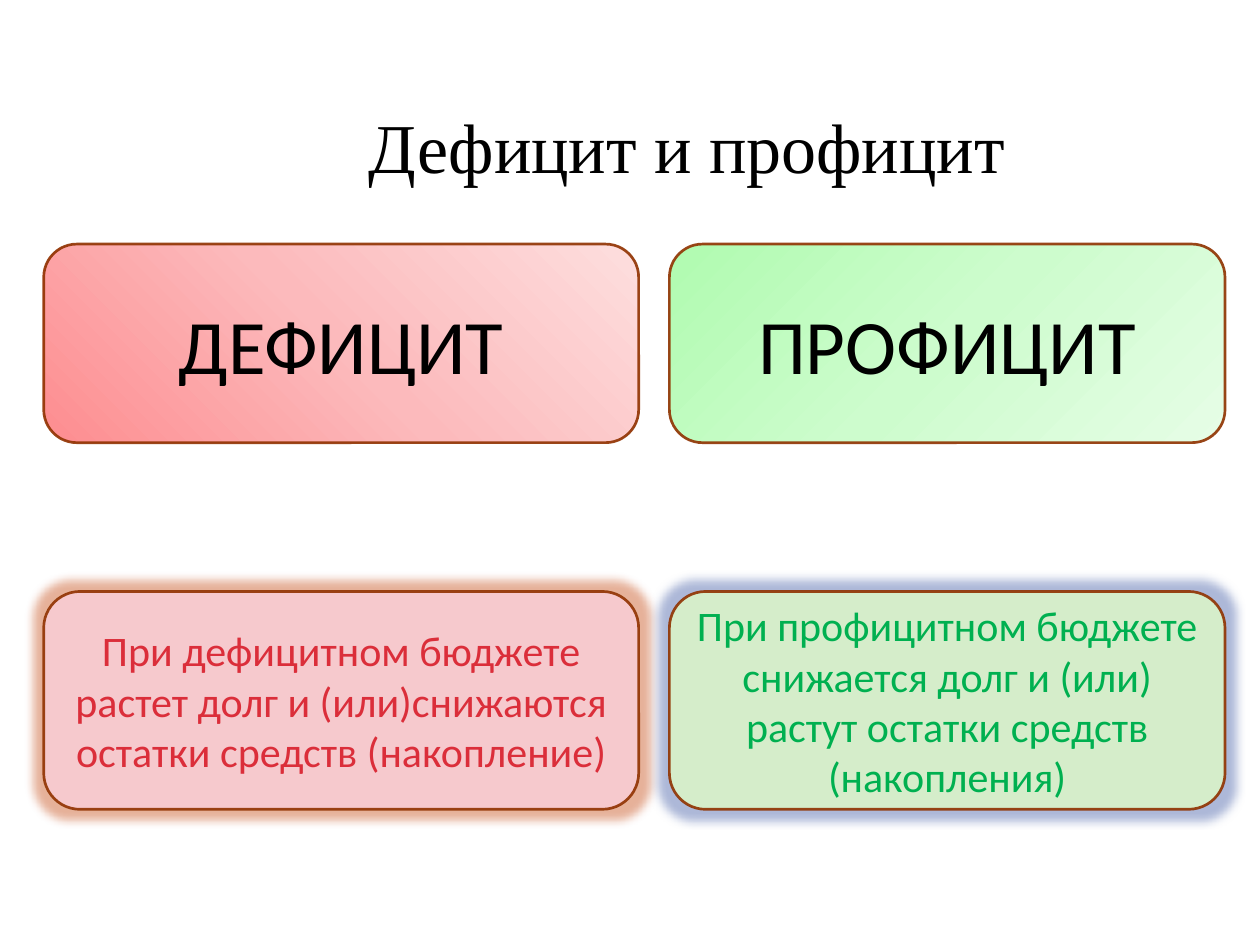
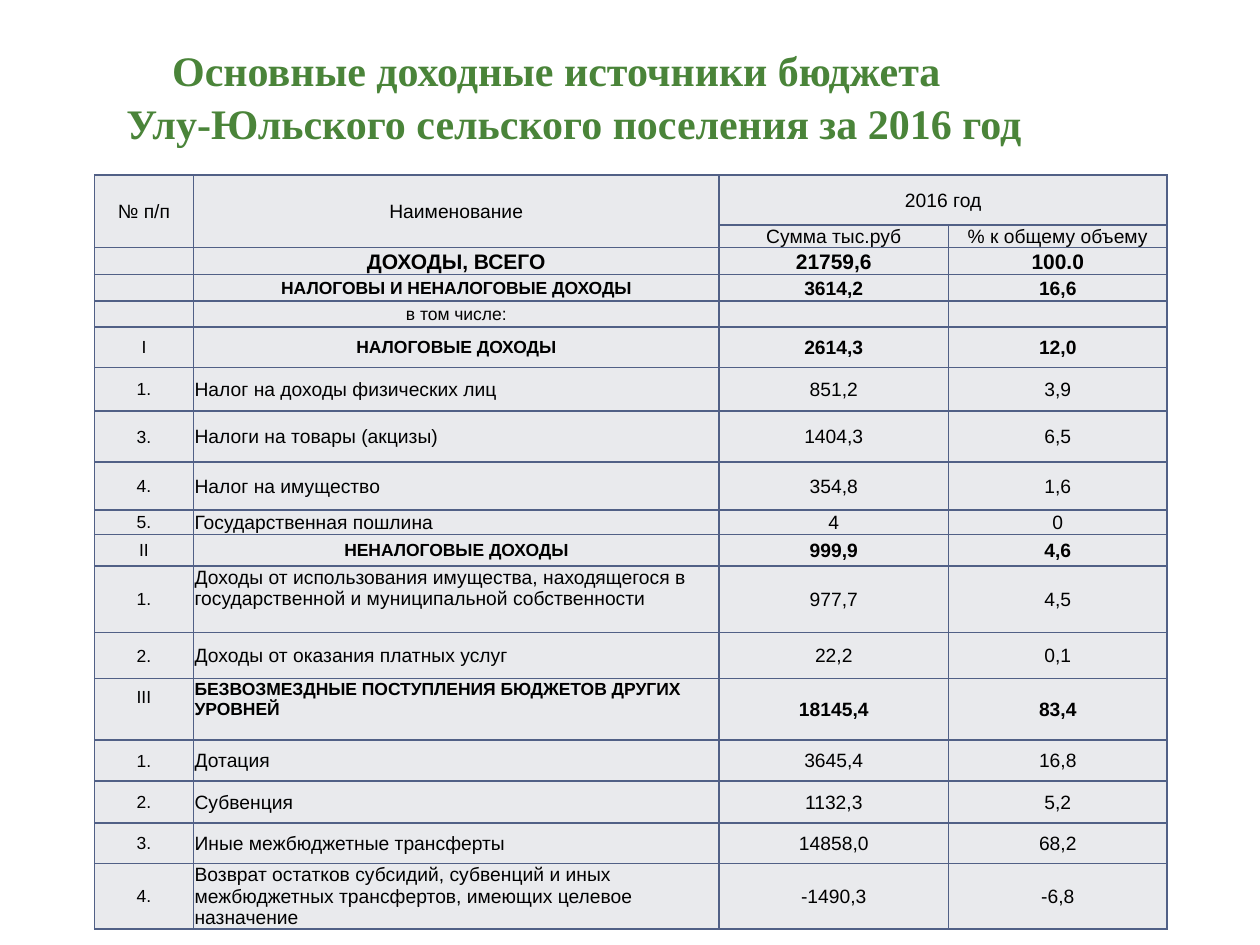
"""Build two budget slides: deficit against surplus, and the sources of income."""
import dataclasses
import typing

import lxml.etree
import pptx
import pptx.dml.color
import pptx.enum.shapes
import pptx.enum.text
import pptx.oxml
import pptx.oxml.ns
import pptx.util

Pt = pptx.util.Pt
ALIGN = pptx.enum.text.PP_ALIGN
ANCHOR = pptx.enum.text.MSO_ANCHOR
SPACE = pptx.oxml.ns.nsdecls("a")
BLACK, GREEN = "000000", "4A8439"
EDGE, GRID, CELL = "903200", "516086", "E9EAED"
SERIF, SANS, BODY = "Times New Roman", "Arial", "Calibri"


@dataclasses.dataclass
class Card:
    text: str
    col: int
    row: int
    size: float
    ink: str
    fills: tuple[str, ...]
    angle: int = 0
    glow: str = ""


@dataclasses.dataclass
class Line:
    mark: str
    name: str
    sum: str
    share: str
    high: float
    bold: bool = False
    size: float = 11
    mid: bool = True
    top: bool = False
    body: float = 11


COLS = ((25, 340), (382.5, 317.5))
ROWS = ((139.5, 113.5), (338, 124.5))
CARDS = (
    Card("ДЕФИЦИТ", 0, 0, 44, BLACK, ("FD8D90", "FCBABC", "FDDEDE"), 315),
    Card("ПРОФИЦИТ", 1, 0, 44, BLACK, ("B0FBB0", "CDFCCD", "E6FDE6"), 45),
    Card("При дефицитном бюджете растет долг и (или)снижаются остатки средств (накопление)",
         0, 1, 24, "DB2E3A", ("F6C9CD",), glow="C13C00"),
    Card("При профицитном бюджете снижается долг и (или) растут остатки средств (накопления)",
         1, 1, 24, "00B050", ("D5EDCA",), glow="324E9E"),
)
WIDTHS = (56.5, 300.5, 131, 125)
HEADS = (28.5, 13)
LINES = (
    Line("", "ДОХОДЫ, ВСЕГО", "21759,6", "100.0", 15.5, True, 12, body=12),
    Line("", "НАЛОГОВЫ И НЕНАЛОГОВЫЕ ДОХОДЫ", "3614,2", "16,6", 15, True, 10),
    Line("", "в том числе:", "", "", 15, size=10),
    Line("I", "НАЛОГОВЫЕ ДОХОДЫ", "2614,3", "12,0", 23, True, 10),
    Line("1.", "Налог на доходы физических лиц", "851,2", "3,9", 25, mid=False),
    Line("3.", "Налоги на товары (акцизы)", "1404,3", "6,5", 29, mid=False),
    Line("4.", "Налог на имущество", "354,8", "1,6", 27.5, mid=False),
    Line("5.", "Государственная пошлина", "4", "0", 14, mid=False),
    Line("II", "НЕНАЛОГОВЫЕ ДОХОДЫ", "999,9", "4,6", 18, True, 10),
    Line("1.", "Доходы от использования имущества, находящегося в государственной и "
         "муниципальной собственности", "977,7", "4,5", 38, mid=False, top=True),
    Line("2.", "Доходы от оказания платных услуг", "22,2", "0,1", 26.5, mid=False),
    Line("III", "БЕЗВОЗМЕЗДНЫЕ ПОСТУПЛЕНИЯ БЮДЖЕТОВ ДРУГИХ УРОВНЕЙ", "18145,4", "83,4",
         35, True, 10, False, True),
    Line("1.", "Дотация", "3645,4", "16,8", 23.5, mid=False),
    Line("2.", "Субвенция", "1132,3", "5,2", 24, mid=False),
    Line("3.", "Иные межбюджетные трансферты", "14858,0", "68,2", 23, mid=False),
    Line("4.", "Возврат остатков субсидий, субвенций и иных межбюджетных трансфертов, "
         "имеющих целевое назначение", "-1490,3", "-6,8", 37, mid=False),
)


def paint(part: typing.Any, tint: str) -> None:
    part.solid()
    part.fore_color.rgb = pptx.dml.color.RGBColor.from_string(tint)


def style(font: typing.Any, face: str, size: float, tint: str, bold: bool = False) -> None:
    font.name, font.size, font.bold = face, Pt(size), bold
    paint(font.fill, tint)


def write(para: typing.Any, text: str, face: str, size: float, tint: str,
          bold: bool = False, mid: bool = True) -> None:
    para.alignment = ALIGN.CENTER if mid else ALIGN.LEFT
    run = para.add_run()
    run.text = text
    style(run.font, face, size, tint, bold)


def start(deck: typing.Any, texts: tuple[str, ...], box: tuple[float, ...],
          size: float, tint: str, bold: bool = False, shift: float = 0) -> typing.Any:
    slide = deck.slides.add_slide(deck.slide_layouts[5])
    title = slide.shapes.title
    title.left, title.top, title.width, title.height = map(Pt, box)
    frame = title.text_frame
    frame.auto_size = pptx.enum.text.MSO_AUTO_SIZE.NONE
    frame.word_wrap = True
    frame.vertical_anchor = ANCHOR.MIDDLE
    frame.margin_left = frame.margin_right = 0
    for i, text in enumerate(texts):
        para = frame.add_paragraph() if i else frame.paragraphs[0]
        para.space_before = Pt(1.5 * i)
        para._p.get_or_add_pPr().set("marL", str(Pt(shift * i)))
        write(para, text, SERIF, size, tint, bold)
    return slide


def blend(shape: typing.Any, tints: tuple[str, ...], angle: int) -> None:
    shape.fill.gradient()
    step = 100000 // (len(tints) - 1)
    stops = "".join(f'<a:gs pos="{i * step}"><a:srgbClr val="{tint}"/></a:gs>'
                    for i, tint in enumerate(tints))
    props = shape._element.spPr
    props.replace(props.find(pptx.oxml.ns.qn("a:gradFill")), pptx.oxml.parse_xml(
        f'<a:gradFill {SPACE} rotWithShape="1"><a:gsLst>{stops}</a:gsLst>'
        f'<a:lin ang="{angle * 60000}" scaled="0"/></a:gradFill>'))


def draw(slide: typing.Any, card: Card) -> None:
    left, width = COLS[card.col]
    top, high = ROWS[card.row]
    shape = slide.shapes.add_shape(pptx.enum.shapes.MSO_SHAPE.ROUNDED_RECTANGLE,
                                   *map(Pt, (left, top, width, high)))
    shape.shadow.inherit = False
    if len(card.fills) > 1:
        blend(shape, card.fills, card.angle)
    else:
        paint(shape.fill, card.fills[0])
    paint(shape.line.fill, EDGE)
    shape.line.width = Pt(1.54)
    props = shape._element.spPr
    tone = props.find(".//" + pptx.oxml.ns.qn("a:ln")).find(".//" + pptx.oxml.ns.qn("a:srgbClr"))
    lxml.etree.SubElement(tone, pptx.oxml.ns.qn("a:alpha"), val="90000")
    if card.glow:
        props.find(pptx.oxml.ns.qn("a:effectLst")).append(pptx.oxml.parse_xml(
            f'<a:glow {SPACE} rad="{Pt(11)}"><a:srgbClr val="{card.glow}">'
            '<a:alpha val="40000"/></a:srgbClr></a:glow>'))
    frame = shape.text_frame
    frame.word_wrap = True
    frame.vertical_anchor = ANCHOR.MIDDLE
    write(frame.paragraphs[0], card.text, BODY, card.size, card.ink)


def fill(cell: typing.Any, text: str, size: float, bold: bool = False,
         mid: bool = True, top: float | None = None) -> None:
    cell.vertical_anchor = ANCHOR.MIDDLE if top is None else ANCHOR.TOP
    cell.margin_left = cell.margin_right = Pt(0.7)
    cell.margin_top, cell.margin_bottom = Pt(top or 0.7), 0
    para = cell.text_frame.paragraphs[0]
    if text:
        write(para, text, SANS, size, BLACK, bold, mid)
    else:
        style(para.font, SANS, size, BLACK)


def rule(cell: typing.Any) -> None:
    paint(cell.fill, CELL)
    props = cell._tc.get_or_add_tcPr()
    for i, side in enumerate("LRTB"):
        props.insert(i, pptx.oxml.parse_xml(
            f'<a:ln{side} {SPACE} w="{Pt(1)}"><a:solidFill><a:srgbClr val="{GRID}"/>'
            f'</a:solidFill></a:ln{side}>'))


def chart(slide: typing.Any) -> None:
    highs = HEADS + tuple(line.high for line in LINES)
    table = slide.shapes.add_table(len(highs), len(WIDTHS), Pt(54), Pt(100),
                                   Pt(sum(WIDTHS)), Pt(sum(highs))).table
    table.first_row = table.horz_banding = False
    for col, width in zip(table.columns, WIDTHS):
        col.width = Pt(width)
    for row, high in zip(table.rows, highs):
        row.height = Pt(high)
    for cell in table.iter_cells():
        rule(cell)
    for first, last in (((0, 0), (1, 0)), ((0, 1), (1, 1)), ((0, 2), (0, 3))):
        table.cell(*first).merge(table.cell(*last))
    heads = {(0, 0): "№ п/п", (0, 1): "Наименование", (0, 2): "2016 год",
             (1, 2): "Сумма тыс.руб", (1, 3): "% к общему объему"}
    for spot, text in heads.items():
        fill(table.cell(*spot), text, 11)
    for i, line in enumerate(LINES, len(HEADS)):
        mark, name, total, share = (table.cell(i, j) for j in range(len(WIDTHS)))
        fill(mark, line.mark, 10, top=5 if line.mark == "III" else None)
        fill(name, line.name, line.size, line.bold, line.mid, 0.7 if line.top else None)
        fill(total, line.sum, line.body, line.bold)
        fill(share, line.share, line.body, line.bold)


def main() -> None:
    deck = pptx.Presentation()
    deck.slide_width, deck.slide_height = Pt(720), Pt(540)
    slide = start(deck, ("Дефицит и профицит",), (125, 55, 535, 56), 40, BLACK)
    for card in CARDS:
        draw(slide, card)
    slide = start(deck, ("Основные доходные источники бюджета",
                         "Улу-Юльского сельского поселения за 2016 год"),
                  (48, 20, 540, 70), 24, GREEN, True, 20)
    chart(slide)
    deck.save("out.pptx")


if __name__ == "__main__":
    main()
